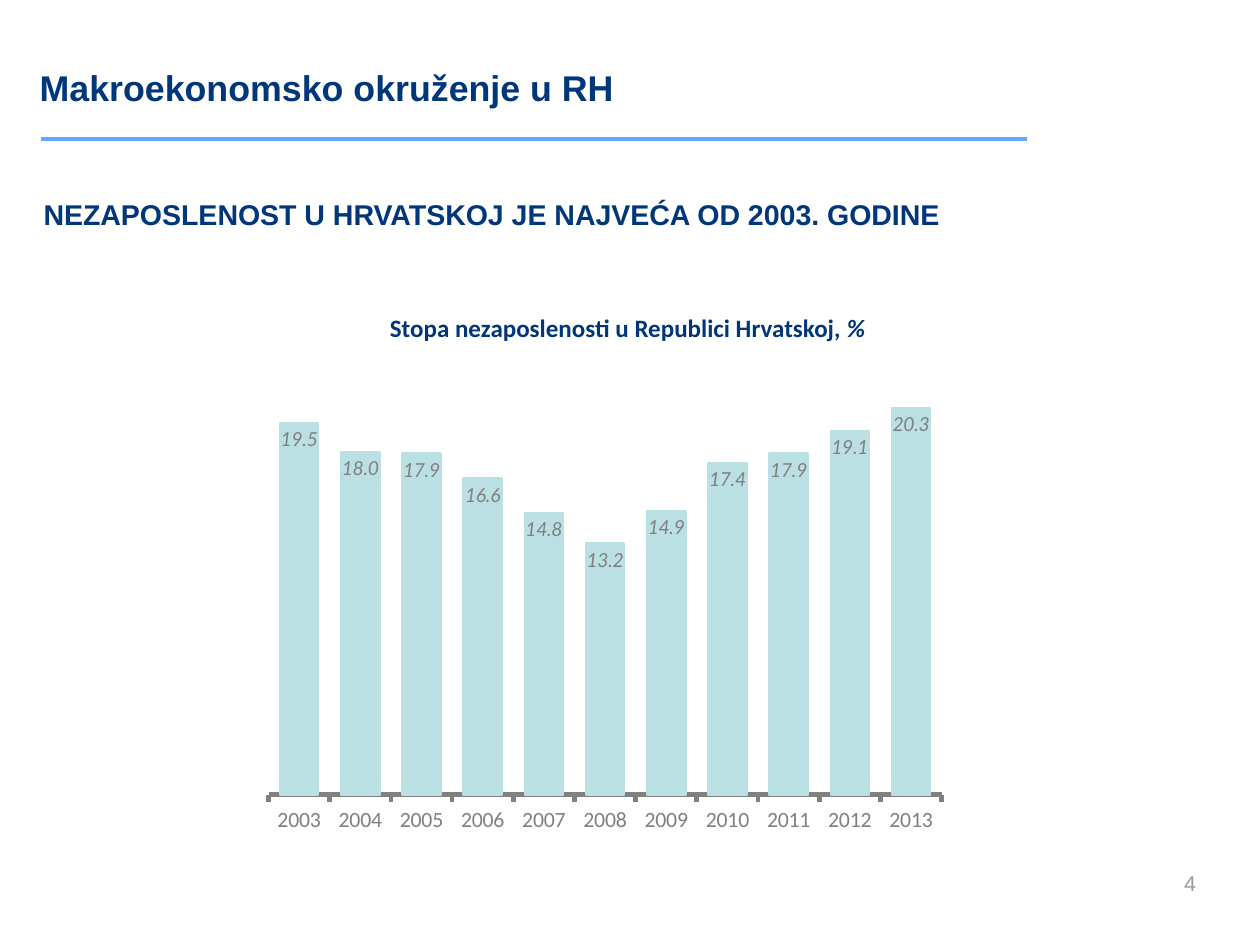
from lxml.etree import SubElement
from pptx import Presentation
from pptx.chart.data import CategoryChartData
from pptx.dml.color import RGBColor
from pptx.enum.chart import XL_CHART_TYPE, XL_LABEL_POSITION, XL_TICK_LABEL_POSITION, XL_TICK_MARK
from pptx.enum.shapes import MSO_CONNECTOR
from pptx.enum.text import MSO_ANCHOR, PP_ALIGN
from pptx.oxml import parse_xml
from pptx.oxml.ns import nsdecls, qn
from pptx.util import Pt

PX = 9144  # 100 px to the inch
COLORS = {"navy": "00367A", "rule": "64A8FF", "bar": "BBE0E3",
          "gray": "808080", "number": "9C9C9C"}
RATES = {2003: 19.5, 2004: 18.0, 2005: 17.9, 2006: 16.6, 2007: 14.8, 2008: 13.2,
         2009: 14.9, 2010: 17.4, 2011: 17.9, 2012: 19.1, 2013: 20.3}


def color(name):
    return RGBColor.from_string(COLORS[name])


def emu(*lengths):
    return [n * PX for n in lengths]


def set_font(font, name, size, fill, bold=False, italic=False):
    font.name, font.size, font.bold, font.italic = name, Pt(size), bold, italic
    font.color.rgb = color(fill)


def add_text(s, box, runs, size, fill="navy", name="Arial", bold=True,
             align=PP_ALIGN.LEFT, anchor=MSO_ANCHOR.TOP):
    tf = s.shapes.add_textbox(*emu(*box)).text_frame
    tf.word_wrap = True
    tf.vertical_anchor = anchor
    p = tf.paragraphs[0]
    p.alignment = align
    for text in runs:
        p.add_run().text = text
    set_font(p.font, name, size, fill, bold)
    return p


def add_header(s, x, y, w, h):
    # Title and the rule under it
    add_text(s, (x, y, w, h), ["Makroekonomsko okruženje u RH"], 20, anchor=MSO_ANCHOR.MIDDLE)
    left, top = x + 11, y + h + 6
    rule = s.shapes.add_connector(MSO_CONNECTOR.STRAIGHT, *emu(left, top, left + 767, top))
    rule.line.color.rgb = color("rule")
    rule.line.width = Pt(2)
    SubElement(rule._element.spPr, qn("a:effectLst"))


def set_plot_area(chart, **fractions):
    values = "".join(f'<c:{k} val="{v}"/>' for k, v in fractions.items())
    plot_area = chart._chartSpace.chart.plotArea
    for old in plot_area.findall(qn("c:layout")):
        plot_area.remove(old)
    plot_area.insert(0, parse_xml(
        f'<c:layout {nsdecls("c")}><c:manualLayout><c:layoutTarget val="inner"/>'
        f'<c:xMode val="edge"/><c:yMode val="edge"/>{values}</c:manualLayout></c:layout>'))


def add_rate_chart(s, x, y, w, h):
    data = CategoryChartData()
    data.categories = [str(year) for year in RATES]
    data.add_series("Series 1", RATES.values())
    chart = s.shapes.add_chart(XL_CHART_TYPE.COLUMN_STACKED, *emu(x, y, w, h), data).chart
    chart.has_legend = chart.has_title = False
    set_font(chart.font, "Calibri", 12, "gray")
    set_plot_area(chart, x=0.002, y=0.045, w=0.865, h=0.721)

    # Axes
    years, rates = chart.category_axis, chart.value_axis
    years.major_tick_mark = XL_TICK_MARK.OUTSIDE
    years.format.line.color.rgb = color("gray")
    years.format.line.width = Pt(2.7)
    set_font(years.tick_labels.font, "Calibri", 12.2, "gray")
    rates.minimum_scale, rates.maximum_scale = 0, 23
    rates.has_major_gridlines = False
    rates.tick_label_position = XL_TICK_LABEL_POSITION.NONE
    rates.visible = False

    # Columns
    plot = chart.plots[0]
    plot.gap_width, plot.overlap = 60, 100
    plot.vary_by_categories = False
    bars = plot.series[0].format
    bars.fill.solid()
    bars.fill.fore_color.rgb = color("bar")
    bars.line.color.rgb = color("bar")
    bars.line.width = Pt(1.35)

    # Values
    labels = plot.series[0].data_labels
    labels.show_value = True
    labels.position = XL_LABEL_POSITION.INSIDE_END
    labels.number_format, labels.number_format_is_linked = "#,##0.0", False
    set_font(labels.font, "Lato", 10.8, "gray", italic=True)


def add_chart_region(s, x, y, w, h):
    add_rate_chart(s, x, y + 18, w, h - 18)
    p = add_text(s, (x + 47, y, 468, 40), ["Stopa nezaposlenosti u Republici Hrvatskoj, ", "%"],
                 14, name="Calibri", align=PP_ALIGN.CENTER)
    p.runs[1].font.italic = True


def main():
    prs = Presentation()
    prs.slide_width, prs.slide_height = emu(980, 735)
    s = prs.slides.add_slide(prs.slide_layouts[6])
    add_header(s, 21, 34, 945, 68)
    add_text(s, (24, 148, 882, 83),
             ["NEZAPOSLENOST U HRVATSKOJ JE NAJVEĆA OD 2003. GODINE"], 16)
    add_chart_region(s, 207, 238, 606, 491)
    # Page number
    add_text(s, (711, 661, 229, 51), ["4"], 12, "number", bold=False,
             align=PP_ALIGN.RIGHT, anchor=MSO_ANCHOR.MIDDLE)
    prs.save("out.pptx")


if __name__ == "__main__":
    main()
